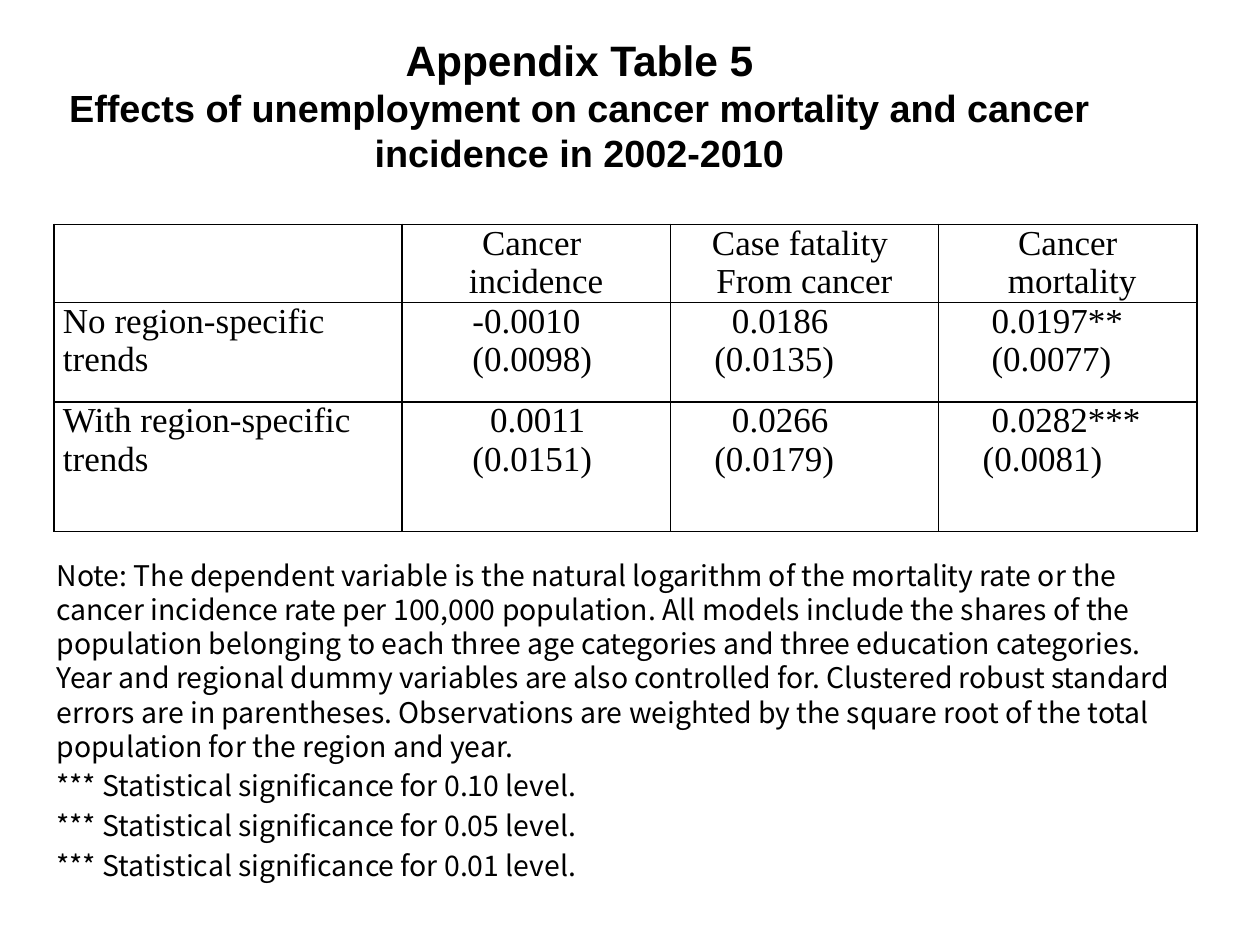
from lxml.etree import fromstring
from pptx import Presentation
from pptx.dml.color import RGBColor
from pptx.enum.text import MSO_ANCHOR, PP_ALIGN
from pptx.util import Inches, Pt

# Content
TITLE = [
    ("Appendix Table 5", 24.3, 28),
    ("Effects of unemployment on cancer mortality and cancer "
     "incidence in 2002-2010", 21.6, 25.7),
]
NOTES = [
    "Note: The dependent variable is the natural logarithm of the mortality "
    "rate or the cancer incidence rate per 100,000 population. All models "
    "include the shares of the population belonging to each three age "
    "categories and three education categories. Year and regional dummy "
    "variables are also controlled for. Clustered robust standard errors are "
    "in parentheses. Observations are weighted by the square root of the "
    "total population for the region and year.",
    "*** Statistical significance for 0.10 level.",
    "*** Statistical significance for 0.05 level.",
    "*** Statistical significance for 0.01 level.",
]
HEAD = [[], ["Cancer ", "incidence"], ["Case fatality ", "From cancer"],
        ["Cancer", " mortality"]]
# Body lines: (text, indent in steps)
BODY = [
    [[("No region-specific", 0), ("trends", 0)],
     [("-0.0010", 7), ("(0.0098)", 7)],
     [("0.0186", 6), ("(0.0135)", 4)],
     [("0.0197**", 5), ("(0.0077)", 5)]],
    [[("With region-specific", 0), ("trends", 0)],
     [("0.0011", 9), ("(0.0151)", 7)],
     [("0.0266", 6), ("(0.0179)", 4)],
     [("0.0282***", 5), ("(0.0081)", 4)]],
]
COLS = [2.76, 2.13, 2.13, 2.05]
ROWS = [0.62, 0.79, 1.03]
STEP = 0.07
INK = "000000"
NS = "http://schemas.openxmlformats.org/drawingml/2006/main"


def color(code):
    return RGBColor.from_string(code)


def add_line(frame, num, text, font, size, pitch, bold=False):
    para = frame.paragraphs[0] if num == 0 else frame.add_paragraph()
    para.line_spacing = Pt(pitch)
    run = para.add_run()
    run.text = text
    run.font.name, run.font.size, run.font.bold = font, Pt(size), bold
    run.font.color.rgb = color(INK)
    return para


def add_box(slide, left, top, width, height):
    box = slide.shapes.add_textbox(*map(Inches, (left, top, width, height)))
    frame = box.text_frame
    frame.word_wrap = True
    frame.vertical_anchor = MSO_ANCHOR.TOP
    return frame


def add_border(cell):
    props = cell._tc.get_or_add_tcPr()
    for pos, side in enumerate("LRTB"):
        props.insert(pos, fromstring(
            f'<a:ln{side} xmlns:a="{NS}" w="12700"><a:solidFill>'
            f'<a:srgbClr val="{INK}"/></a:solidFill></a:ln{side}>'))


def fill_cell(cell, lines, head):
    cell.margin_left = cell.margin_right = Inches(0.07)
    cell.margin_top = cell.margin_bottom = 0
    cell.fill.background()
    add_border(cell)
    for num, (text, steps) in enumerate(lines):
        para = add_line(cell.text_frame, num, text, "Times New Roman", 20, 22)
        para.alignment = PP_ALIGN.CENTER if head else PP_ALIGN.LEFT
        if steps:
            para._p.get_or_add_pPr().set("marL", str(Inches(steps * STEP)))


def main():
    deck = Presentation()
    deck.slide_width, deck.slide_height = Inches(10), Inches(7.5)
    slide = deck.slides.add_slide(deck.slide_layouts[6])

    # Title
    frame = add_box(slide, 0.35, 0.24, 8.5, 1.26)
    for num, (text, size, pitch) in enumerate(TITLE):
        para = add_line(frame, num, text, "Arial", size, pitch, True)
        para.alignment = PP_ALIGN.CENTER

    # Notes
    frame = add_box(slide, 0.35, 4.38, 9.29, 2.6)
    for num, text in enumerate(NOTES):
        para = add_line(frame, num, text, "Noto Sans CJK KR", 16.2, 19.5)
        para.space_before = Pt(3.2 if num else 0)

    # Table
    grid = slide.shapes.add_table(
        len(ROWS), len(COLS), Inches(0.43), Inches(1.78),
        Inches(sum(COLS)), Inches(sum(ROWS))).table
    grid.first_row = grid.horz_banding = False
    for col, width in zip(grid.columns, COLS):
        col.width = Inches(width)
    for row, height in zip(grid.rows, ROWS):
        row.height = Inches(height)
    top = [[(text, 0) for text in lines] for lines in HEAD]
    for r, row in enumerate([top] + BODY):
        for c, lines in enumerate(row):
            fill_cell(grid.cell(r, c), lines, r == 0)

    deck.save("out.pptx")


if __name__ == "__main__":
    main()
